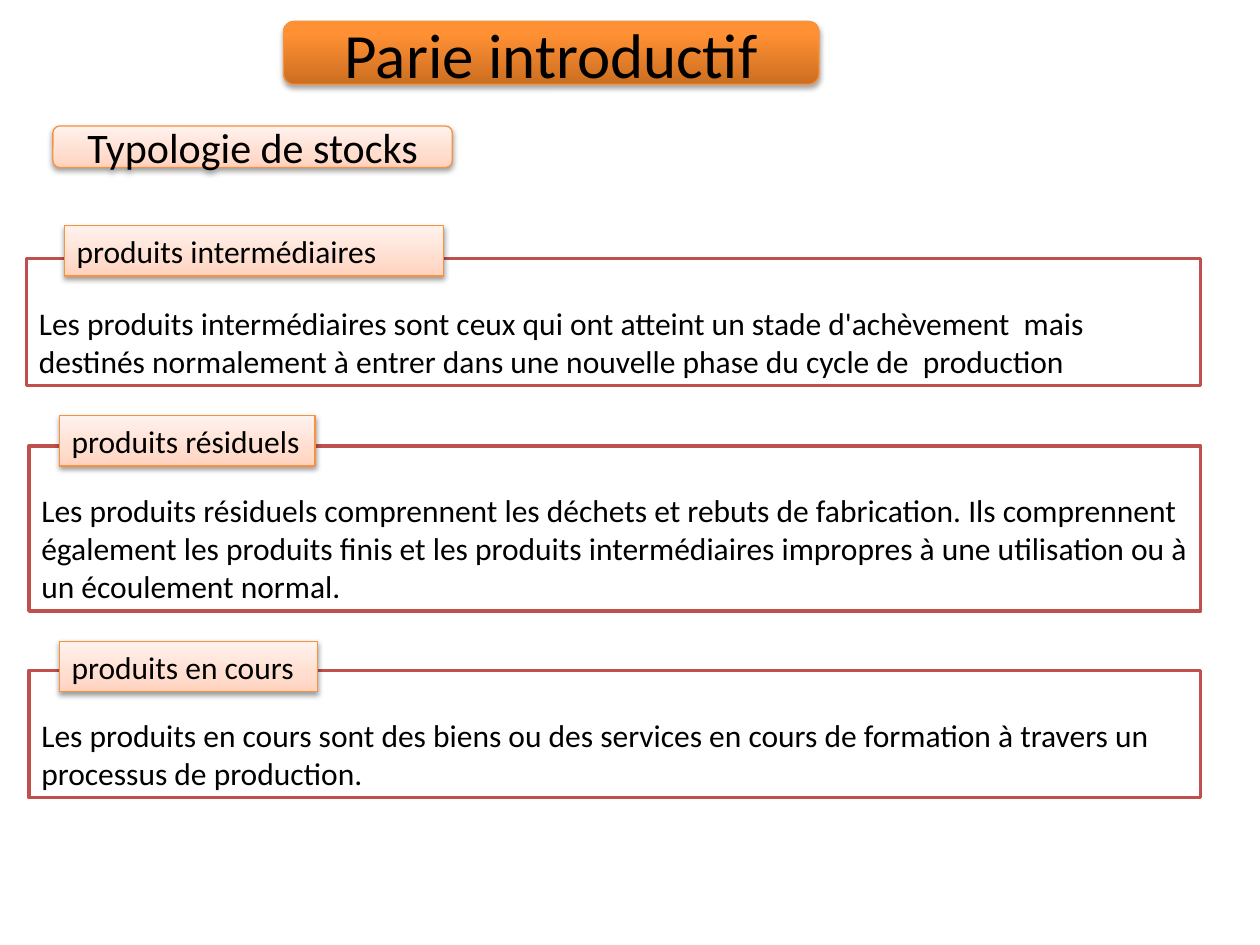
import pptx
import pptx.dml.color
import pptx.enum.shapes
import pptx.enum.text
import pptx.oxml
import pptx.util
from pptx.util import Inches

NAMESPACE = 'xmlns:a="http://schemas.openxmlformats.org/drawingml/2006/main"'
SHAPES = pptx.enum.shapes.MSO_SHAPE
ANCHORS = pptx.enum.text.MSO_ANCHOR
ALIGNMENTS = pptx.enum.text.PP_ALIGN
PALE_ORANGE = [(0, "FFD2BD"), (35, "FFDED0"), (100, "FFF2ED")]
STRONG_ORANGE = [(0, "CC6E20"), (80, "FF9034"), (100, "FF9136")]


def color(value):
    return pptx.dml.color.RGBColor.from_string(value)


def add_box(kind, position, text, size, anchor, alignment, line, line_width, stops=None, shadow=(38, 1.57)):
    """Add a text box shape: white and flat, or with gradient stops and a shadow (opacity, distance)."""
    shape = slide.shapes.add_shape(kind, *[Inches(length) for length in position])
    shape.shadow.inherit = False
    shape.line.color.rgb = color(line)
    shape.line.width = pptx.util.Pt(line_width)
    if stops:
        shape.fill.gradient()
        shape.fill.gradient_angle = 90
        properties = shape.element.spPr
        stop_list = properties.find(".//" + pptx.oxml.ns.qn("a:gsLst"))
        for stop in list(stop_list):
            stop_list.remove(stop)
        for percent, value in stops:
            stop_list.append(pptx.oxml.parse_xml(
                f'<a:gs {NAMESPACE} pos="{percent * 1000}"><a:srgbClr val="{value}"/></a:gs>'))
        opacity, distance = shadow
        properties.find(pptx.oxml.ns.qn("a:effectLst")).append(pptx.oxml.parse_xml(
            f'<a:outerShdw {NAMESPACE} blurRad="{pptx.util.Pt(3.15)}" dist="{pptx.util.Pt(distance)}" '
            f'dir="5400000" rotWithShape="0"><a:srgbClr val="000000">'
            f'<a:alpha val="{opacity * 1000}"/></a:srgbClr></a:outerShdw>'))
    else:
        shape.fill.solid()
        shape.fill.fore_color.rgb = color("FFFFFF")
    frame = shape.text_frame
    frame.word_wrap = True
    frame.vertical_anchor = anchor
    frame.margin_right = 0 if alignment == ALIGNMENTS.LEFT and stops else Inches(0.1)
    frame.text = text
    for paragraph in frame.paragraphs:
        paragraph.alignment = alignment
        paragraph.font.name = "Calibri"
        paragraph.font.size = pptx.util.Pt(size)
        paragraph.font.color.rgb = color("000000")


presentation = pptx.Presentation()
presentation.slide_width = Inches(10)
presentation.slide_height = Inches(7.5)
slide = presentation.slides.add_slide(presentation.slide_layouts[6])

sections = [
    ("produits résiduels", (0.47, 3.3, 2.03, 0.4), (0.23, 3.54, 9.3, 1.31),
     "Les produits résiduels comprennent les déchets et rebuts de fabrication. Ils comprennent "
     "également les produits finis et les produits intermédiaires impropres à une utilisation "
     "ou à un écoulement normal."),
    ("produits en cours", (0.47, 5.09, 2.05, 0.4), (0.23, 5.32, 9.3, 1.01),
     "Les produits en cours sont des biens ou des services en cours de formation à travers un\n"
     "processus de production."),
    ("produits intermédiaires", (0.51, 1.79, 3.01, 0.4), (0.21, 2.05, 9.32, 1.01),
     "Les produits intermédiaires sont ceux qui ont atteint un stade d'achèvement  mais "
     "destinés normalement à entrer dans une nouvelle phase du cycle de  production"),
]
for label, label_position, body_position, body in sections:
    add_box(SHAPES.RECTANGLE, body_position, body, 18, ANCHORS.BOTTOM, ALIGNMENTS.LEFT, "C0504D", 2)
    add_box(SHAPES.RECTANGLE, label_position, label, 18, ANCHORS.TOP, ALIGNMENTS.LEFT,
            "F69240", 0.75, PALE_ORANGE)

add_box(SHAPES.ROUNDED_RECTANGLE, (2.25, 0.17, 4.25, 0.5), "Parie introductif", 36,
        ANCHORS.MIDDLE, ALIGNMENTS.CENTER, "F69240", 0.75, STRONG_ORANGE, (35, 1.81))
add_box(SHAPES.ROUNDED_RECTANGLE, (0.42, 1, 3.17, 0.33), "Typologie de stocks", 24,
        ANCHORS.MIDDLE, ALIGNMENTS.CENTER, "F69240", 0.75, PALE_ORANGE)

presentation.save("out.pptx")
